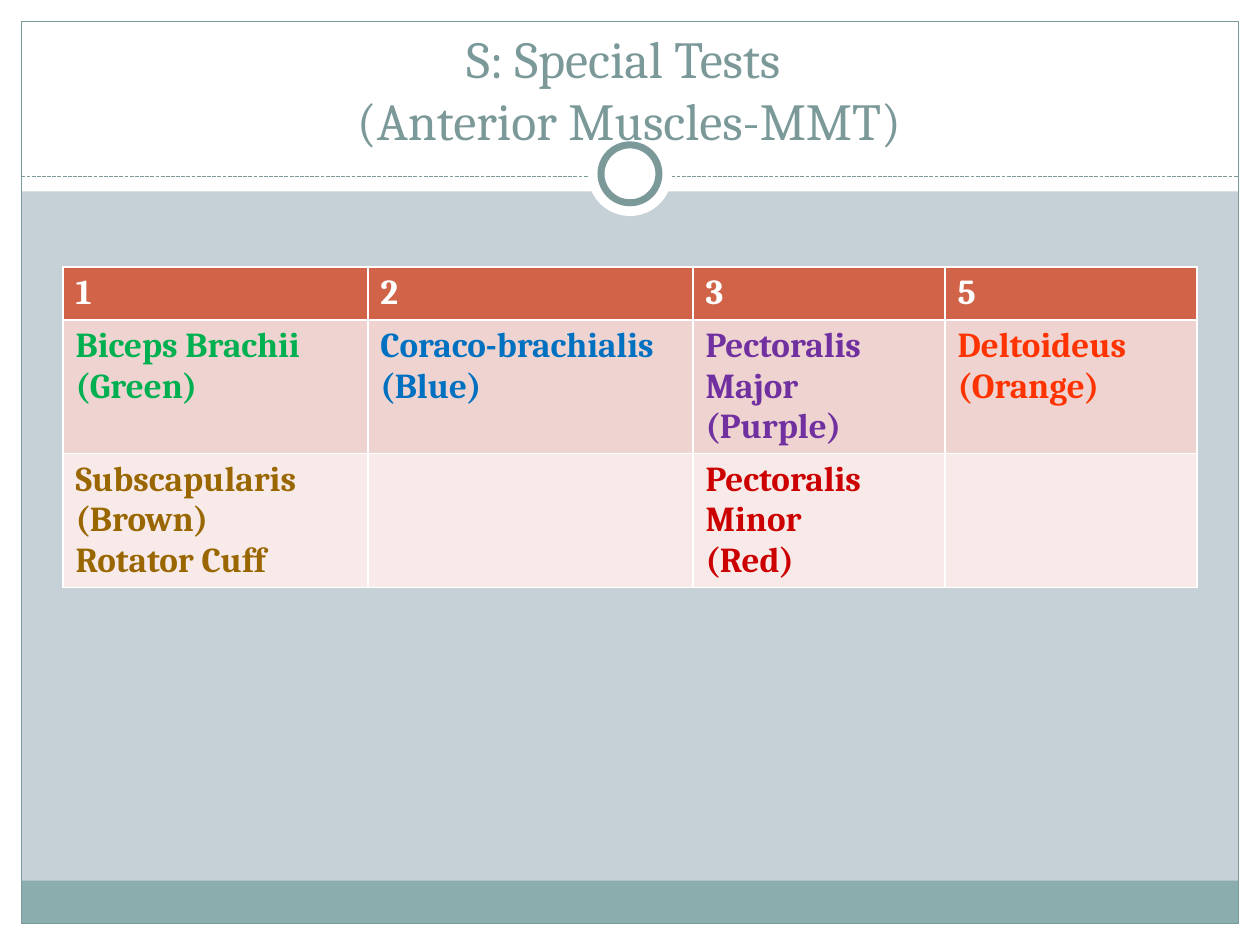
from lxml import etree
from pptx import Presentation, util as u
from pptx.dml.color import RGBColor
from pptx.enum import dml, shapes, text
from pptx.oxml.ns import qn

WIDTH, HEIGHT, MARGIN = 10, 7.5, 0.17
FONT = "Cambria"
COLORS = {
    "page": "C5D1D7", "white": "FFFFFF", "footer": "8CADAE", "slate": "7C999A",
    "header": "D16349", "band": "EED3D0", "pale": "F7EAE9",
    "green": "00B050", "blue": "0070C0", "purple": "7030A0",
    "orange": "FF3300", "brown": "996600", "red": "CC0000",
}
TITLE = ["S: Special Tests ", "(Anterior Muscles-MMT)"]
COLUMN_WIDTHS = [2.42, 2.58, 2, 2]
ROW_HEIGHTS = [0.41, 1.06, 1.06]
ROW_FILLS = ["header", "band", "pale"]
MUSCLES = [
    [("white", ["1"]), ("white", ["2"]), ("white", ["3"]), ("white", ["5"])],
    [("green", ["Biceps Brachii", "(Green)"]),
     ("blue", ["Coraco-brachialis", "(Blue)"]),
     ("purple", ["Pectoralis Major", "(Purple)"]),
     ("orange", ["Deltoideus", "(Orange)"])],
    [("brown", ["Subscapularis", "(Brown)", "Rotator Cuff"]), None,
     ("red", ["Pectoralis Minor", "(Red)"]), None],
]
INNER = WIDTH - 2 * MARGIN
RECT, OVAL = shapes.MSO_SHAPE.RECTANGLE, shapes.MSO_SHAPE.OVAL
RING_X, RING_Y = WIDTH / 2, 1.38
HALO, RING = 0.67, 0.46
FRAME = [
    (RECT, 0, HEIGHT - MARGIN, WIDTH, MARGIN, "white", None),
    (RECT, 0, 0, WIDTH, 1.52, "white", None),
    (RECT, 0, 0, MARGIN, HEIGHT, "white", None),
    (RECT, WIDTH - MARGIN, 0, MARGIN, HEIGHT, "white", None),
    (RECT, MARGIN, 6.99, INNER, 0.34, "footer", None),
    (RECT, MARGIN, MARGIN, INNER, HEIGHT - 2 * MARGIN, None, 0.75),
]
MEDALLION = [
    (OVAL, RING_X - size / 2, RING_Y - size / 2, size, size, "white", line)
    for size, line in [(HALO, None), (RING, 4)]
]


def rgb(name):
    return RGBColor.from_string(COLORS[name])


def add_span(para, words, size, color, bold=False):
    span = para.add_run()
    span.text = words
    span.font.name, span.font.size, span.font.bold = FONT, u.Pt(size), bold
    span.font.color.rgb = rgb(color)


def add_piece(page, kind, left, top, width, height, fill, line):
    piece = page.shapes.add_shape(kind, *map(u.Inches, (left, top, width, height)))
    piece.shadow.inherit = False
    if fill:
        piece.fill.solid()
        piece.fill.fore_color.rgb = rgb(fill)
    else:
        piece.fill.background()
    if line:
        piece.line.color.rgb = rgb("slate")
        piece.line.width = u.Pt(line)
    else:
        piece.line.fill.background()


def add_divider(page):
    divider = page.shapes.add_connector(
        shapes.MSO_CONNECTOR.STRAIGHT,
        *map(u.Inches, (MARGIN, 1.4, WIDTH - MARGIN, 1.4)))
    divider.line.color.rgb = rgb("slate")
    divider.line.width = u.Pt(0.75)
    divider.line.dash_style = dml.MSO_LINE.SQUARE_DOT
    properties = divider.element.find(qn("p:spPr"))
    etree.SubElement(properties, qn("a:effectLst"))


def set_title(page):
    title = page.shapes.title
    title.element.getparent().append(title.element)
    title.left, title.top, title.width, title.height = map(
        u.Inches, (0.33, 0.25, 9.33, 1))
    frame = title.text_frame
    frame.word_wrap = True
    frame.auto_size = text.MSO_AUTO_SIZE.NONE
    frame.vertical_anchor = text.MSO_ANCHOR.BOTTOM
    para = frame.paragraphs[0]
    para.alignment = text.PP_ALIGN.CENTER
    for index, words in enumerate(TITLE):
        if index:
            para.add_line_break()
        add_span(para, words, 29.7, "slate")


def format_cell(cell, fill, entry):
    properties = cell._tc.get_or_add_tcPr()
    for side in ("a:lnL", "a:lnR", "a:lnT", "a:lnB"):
        border = etree.SubElement(properties, qn(side), w=str(u.Pt(1)))
        solid = etree.SubElement(border, qn("a:solidFill"))
        etree.SubElement(solid, qn("a:srgbClr"), val=COLORS["white"])
    cell.fill.solid()
    cell.fill.fore_color.rgb = rgb(fill)
    if entry:
        color, lines = entry
        frame = cell.text_frame
        for index, words in enumerate(lines):
            para = frame.add_paragraph() if index else frame.paragraphs[0]
            add_span(para, words, 20, color, bold=True)


def add_muscle_table(page):
    area = (0.5, 2.12, sum(COLUMN_WIDTHS), sum(ROW_HEIGHTS))
    table = page.shapes.add_table(
        len(MUSCLES), len(COLUMN_WIDTHS), *map(u.Inches, area)).table
    for column, width in zip(table.columns, COLUMN_WIDTHS):
        column.width = u.Inches(width)
    for row, height, fill, entries in zip(table.rows, ROW_HEIGHTS, ROW_FILLS, MUSCLES):
        row.height = u.Inches(height)
        for cell, entry in zip(row.cells, entries):
            format_cell(cell, fill, entry)


def main():
    deck = Presentation()
    deck.slide_width, deck.slide_height = u.Inches(WIDTH), u.Inches(HEIGHT)
    page = deck.slides.add_slide(deck.slide_layouts[5])
    page.background.fill.solid()
    page.background.fill.fore_color.rgb = rgb("page")
    for piece in FRAME:
        add_piece(page, *piece)
    add_divider(page)
    for piece in MEDALLION:
        add_piece(page, *piece)
    set_title(page)
    add_muscle_table(page)
    deck.save("out.pptx")


if __name__ == "__main__":
    main()
